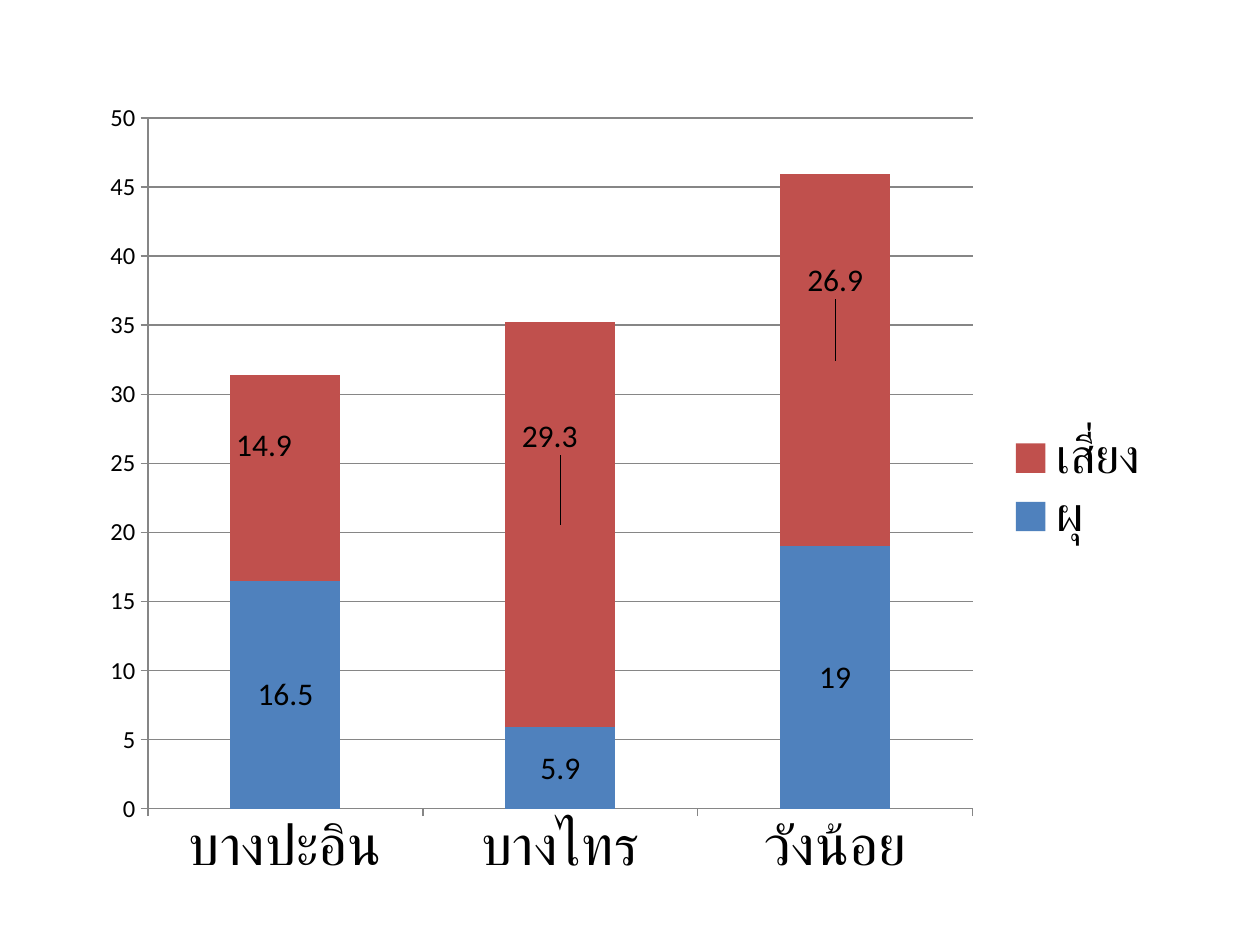
from lxml import etree
from pptx import Presentation
from pptx.chart.data import CategoryChartData
from pptx.dml.color import RGBColor
from pptx.enum.chart import XL_CHART_TYPE, XL_LEGEND_POSITION, XL_TICK_MARK
from pptx.oxml.ns import qn
from pptx.util import Pt

STACKED = XL_CHART_TYPE.COLUMN_STACKED
RIGHT = XL_LEGEND_POSITION.RIGHT
OUTSIDE = XL_TICK_MARK.OUTSIDE


class Theme:
    face = "Calibri"
    ink = RGBColor.from_string("000000")
    line = RGBColor.from_string("868686")
    fills = [RGBColor.from_string("4F81BD"), RGBColor.from_string("C0504D")]
    base, scale, label, legend, names = Pt(10), Pt(14), Pt(18), Pt(28), Pt(32)


def make_layout(**parts):
    layout = etree.Element(qn("c:layout"))
    manual = etree.SubElement(layout, qn("c:manualLayout"))
    for tag, value in parts.items():
        etree.SubElement(manual, qn("c:" + tag)).set("val", str(value))
    return layout


deck = Presentation()
deck.slide_width, deck.slide_height = Pt(720), Pt(540)
slide = deck.slides.add_slide(deck.slide_layouts[6])

data = CategoryChartData()
data.categories = ["บางปะอิน", "บางไทร", "วังน้อย"]
data.add_series("ผุ", [16.5, 5.9, 19])
data.add_series("เสี่ยง", [14.9, 29.3, 26.9])
frame = slide.shapes.add_chart(STACKED, Pt(54), Pt(49), Pt(612), Pt(459), data)
chart = frame.chart
chart.has_title = False
chart.font.name = Theme.face
chart.font.size = Theme.base
chart.font.color.rgb = Theme.ink

area = chart.plots[0]
area.gap_width = 150
area.overlap = 100
area.vary_by_categories = False
for series, fill in zip(area.series, Theme.fills):
    series.format.fill.solid()
    series.format.fill.fore_color.rgb = fill
    series.data_labels.show_value = True
    series.data_labels.font.size = Theme.label

risk = area.series[1]
shifts = [(-0.02, -0.04), (-0.01, -0.11), (0, -0.1)]
for index, (x, y) in enumerate(shifts):
    risk.points[index].data_label.font.size = Theme.label
for label, (x, y) in zip(risk.data_labels._element.findall(qn("c:dLbl")), shifts):
    label.insert(1, make_layout(x=x, y=y))

names, scale = chart.category_axis, chart.value_axis
scale.minimum_scale, scale.maximum_scale, scale.major_unit = 0, 50, 5
scale.has_major_gridlines = True
scale.major_gridlines.format.line.color.rgb = Theme.line
for axis, size in ((names, Theme.names), (scale, Theme.scale)):
    axis.major_tick_mark = OUTSIDE
    axis.tick_labels.font.size = size
    axis.format.line.color.rgb = Theme.line

chart.has_legend = True
chart.legend.position = RIGHT
chart.legend.include_in_layout = False
chart.legend.font.size = Theme.legend

plot = chart._chartSpace.chart.plotArea
for old in plot.findall(qn("c:layout")):
    plot.remove(old)
plot.insert(0, make_layout(layoutTarget="inner", xMode="edge", yMode="edge",
                           x=0.05, y=0.04, w=0.77, h=0.86))

deck.save("out.pptx")
